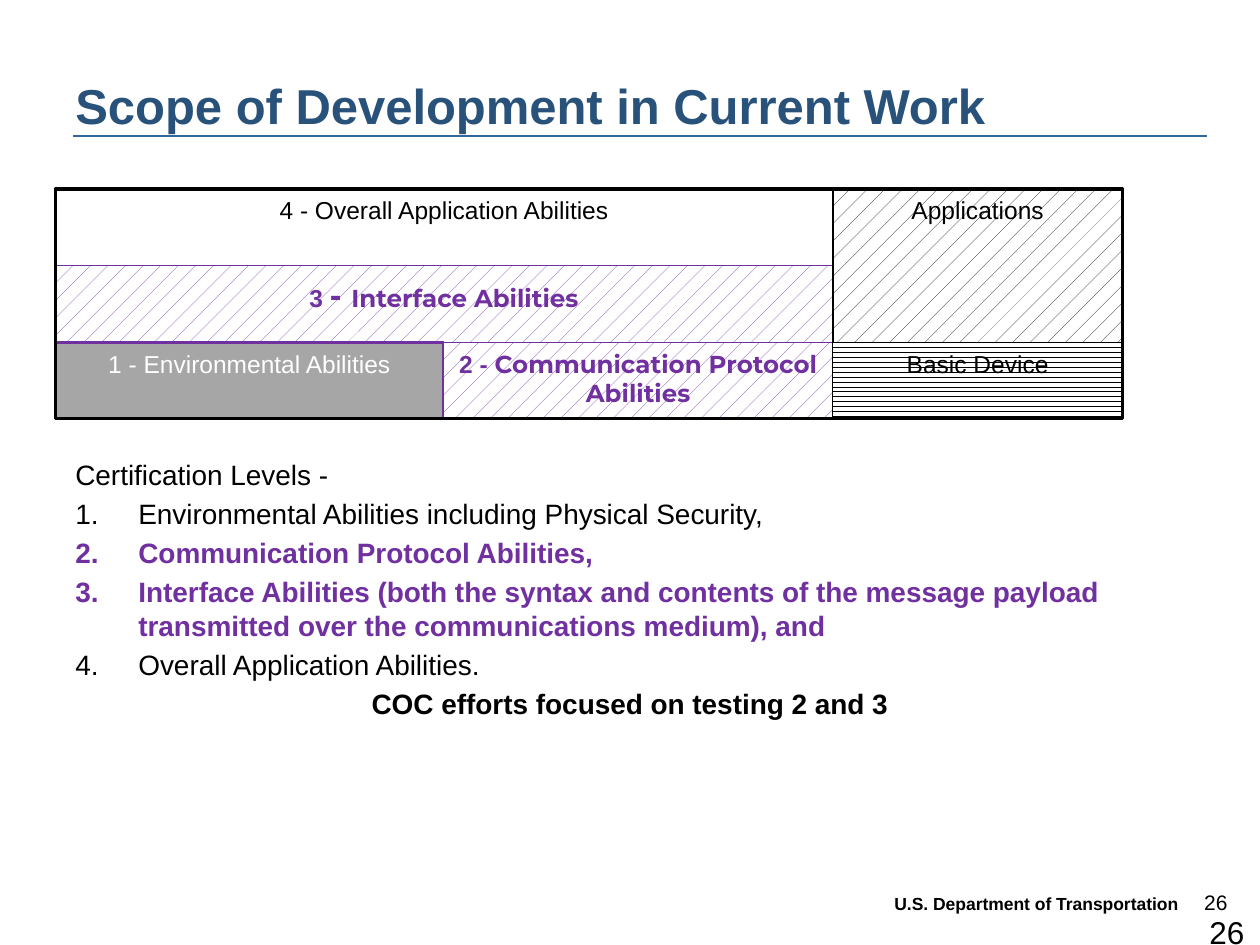
from lxml import etree
from pptx import Presentation
from pptx.dml.color import RGBColor
from pptx.enum.dml import MSO_PATTERN
from pptx.enum.shapes import MSO_CONNECTOR, MSO_SHAPE
from pptx.enum.text import MSO_ANCHOR, PP_ALIGN
from pptx.oxml.ns import qn
from pptx.util import Inches, Pt

LEFT, CENTER, RIGHT = PP_ALIGN.LEFT, PP_ALIGN.CENTER, PP_ALIGN.RIGHT
TOP, MIDDLE = MSO_ANCHOR.TOP, MSO_ANCHOR.MIDDLE
DOTS, WAVE = MSO_PATTERN.PERCENT_5, MSO_PATTERN.WAVE
RECTANGLE, STRAIGHT = MSO_SHAPE.RECTANGLE, MSO_CONNECTOR.STRAIGHT
COLORS = {
    "black": "000000", "white": "FFFFFF", "gray": "A6A6A6",
    "purple": "7030A0", "navy": "29527B", "rule": "336699",
}
RGB = {name: RGBColor.from_string(value) for name, value in COLORS.items()}

deck = Presentation()
deck.slide_width, deck.slide_height = Inches(10), Inches(7.5)
page = deck.slides.add_slide(deck.slide_layouts[6])


def share(left, top, width, height):
    across, down = deck.slide_width / 100, deck.slide_height / 100
    return [int(left * across), int(top * down), int(width * across), int(height * down)]


def add_span(para, text, size, color, bold=False, font="Arial"):
    span = para.add_run()
    span.text = text
    span.font.name, span.font.size, span.font.bold = font, Pt(size), bold
    span.font.color.rgb = RGB[color]


rule = page.shapes.add_connector(STRAIGHT, *share(5.8, 14.4, 95.8, 14.4))
rule.line.color.rgb, rule.line.width = RGB["rule"], Pt(1.5)
etree.SubElement(rule._element.spPr, qn("a:effectLst"))

labels = [
    ((94.2, 93.5, 4.2, 4), "26", 12, "black", False, RIGHT, TOP, None),
    ((70, 94.4, 27.5, 3), "U.S. Department of Transportation", 10, "black", True, LEFT, TOP, Pt(9)),
    ((5, 5.6, 90, 11), "Scope of Development in Current Work", 28, "navy", True, LEFT, MIDDLE, None),
    ((95, 96, 5, 3.9), "26", 18, "black", False, LEFT, TOP, None),
]
for area, text, size, color, bold, align, anchor, spacing in labels:
    box = page.shapes.add_textbox(*share(*area))
    box.text_frame.word_wrap = True
    box.text_frame.vertical_anchor = anchor
    para = box.text_frame.paragraphs[0]
    para.alignment = align
    if spacing:
        para.line_spacing = spacing
    add_span(para, text, size, color, bold)

levels = [
    ("Certification Levels -", "black", False, False, LEFT),
    ("Environmental Abilities including Physical Security,", "black", False, True, LEFT),
    ("Communication Protocol Abilities,", "purple", True, True, LEFT),
    ("Interface Abilities (both the syntax and contents of the message payload "
     "transmitted over the communications medium), and", "purple", True, True, LEFT),
    ("Overall Application Abilities.", "black", False, True, LEFT),
    ("COC efforts focused on testing 2 and 3", "black", True, False, CENTER),
]
body = page.shapes.add_textbox(*share(5, 47.75, 90, 41.6)).text_frame
body.word_wrap = True
for index, (text, color, bold, numbered, align) in enumerate(levels):
    para = body.add_paragraph() if index else body.paragraphs[0]
    para.alignment = align
    if numbered:
        settings = para._p.get_or_add_pPr()
        settings.set("marL", str(Inches(0.5)))
        settings.set("indent", str(-Inches(0.5)))
        etree.SubElement(settings, qn("a:buAutoNum"), type="arabicPeriod")
    if index:
        para.space_before = Pt(3.2)
    add_span(para, text, 16, color, bold)

columns = [4.4, 35.2, 66.1, 89.1]
rows = [20, 28.13, 36.26, 44.3]
cells = [
    (0, 2, 0, 1, "white", None, "black", 0.75,
     [("4 - Overall Application Abilities", 14, "black")]),
    (0, 2, 1, 2, "purple", DOTS, "purple", 0.75,
     [("3 ", 14, "purple", True), ("- ", 20, "purple", True),
      ("Interface Abilities", 14, "purple", True, "Montserrat")]),
    (0, 1, 2, 3, "gray", None, "purple", 1.5,
     [("1 - Environmental Abilities", 14, "white")]),
    (1, 2, 2, 3, "purple", DOTS, "purple", 1,
     [("2 - ", 14, "purple", True),
      ("Communication Protocol Abilities", 14, "purple", True, "Montserrat")]),
    (2, 3, 2, 3, "black", WAVE, "black", 0.75, [("Basic Device", 14, "black")]),
    (2, 3, 0, 2, "black", DOTS, "black", 1, [("Applications", 14, "black")]),
    (0, 3, 0, 3, None, None, "black", 2, []),
]
diagram = page.shapes.add_group_shape()
for first, last, upper, lower, fill, pattern, edge, weight, spans in cells:
    cell = diagram.shapes.add_shape(RECTANGLE, *share(
        columns[first], rows[upper], columns[last] - columns[first], rows[lower] - rows[upper]))
    cell.shadow.inherit = False
    cell.line.color.rgb, cell.line.width = RGB[edge], Pt(weight)
    if pattern:
        cell.fill.patterned()
        cell.fill.pattern = pattern
        cell.fill.fore_color.rgb, cell.fill.back_color.rgb = RGB[fill], RGB["white"]
    elif fill:
        cell.fill.solid()
        cell.fill.fore_color.rgb = RGB[fill]
    else:
        cell.fill.background()
    cell.text_frame.word_wrap = True
    cell.text_frame.vertical_anchor = TOP
    para = cell.text_frame.paragraphs[0]
    para.alignment = CENTER
    for span in spans:
        add_span(para, *span)

deck.save("out.pptx")
